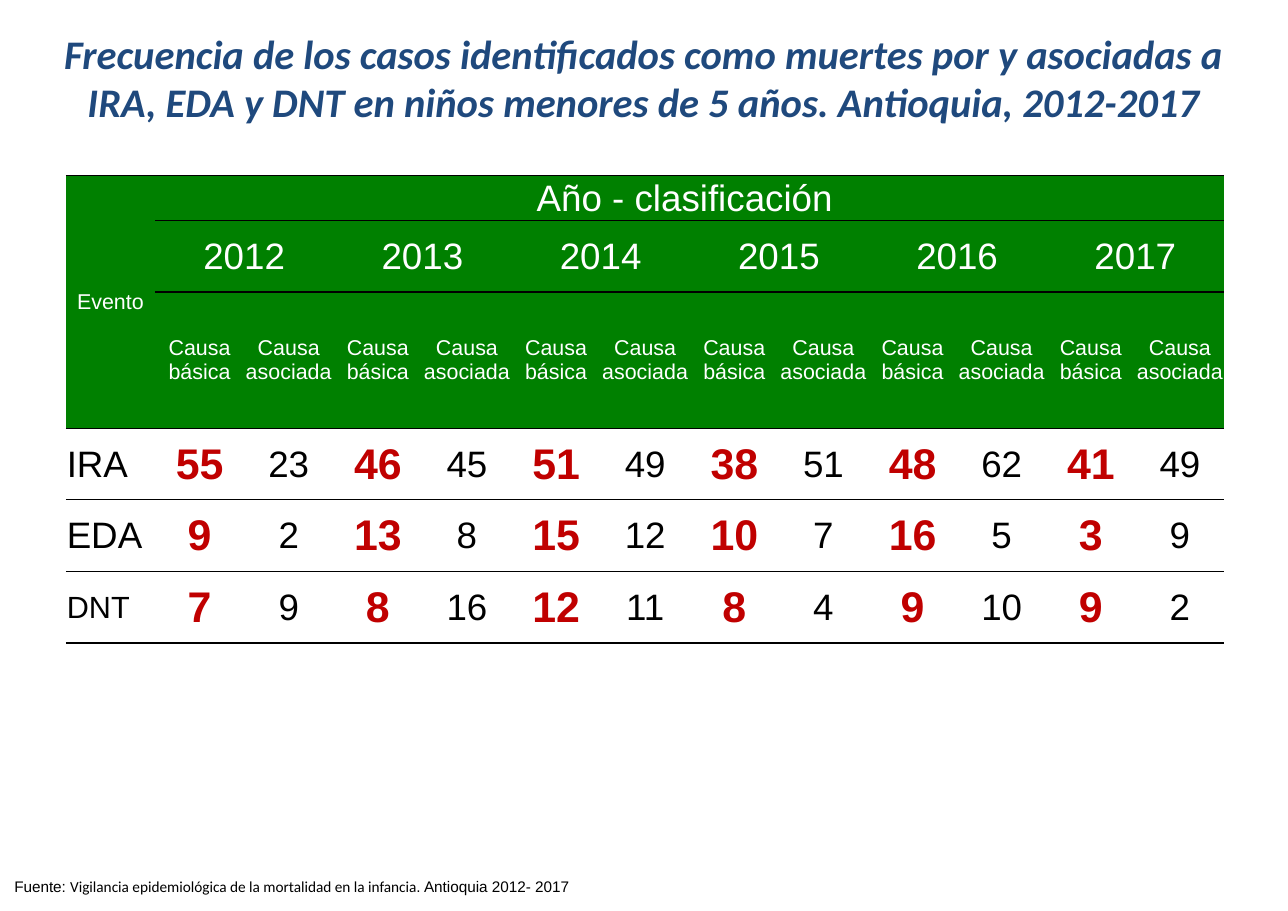
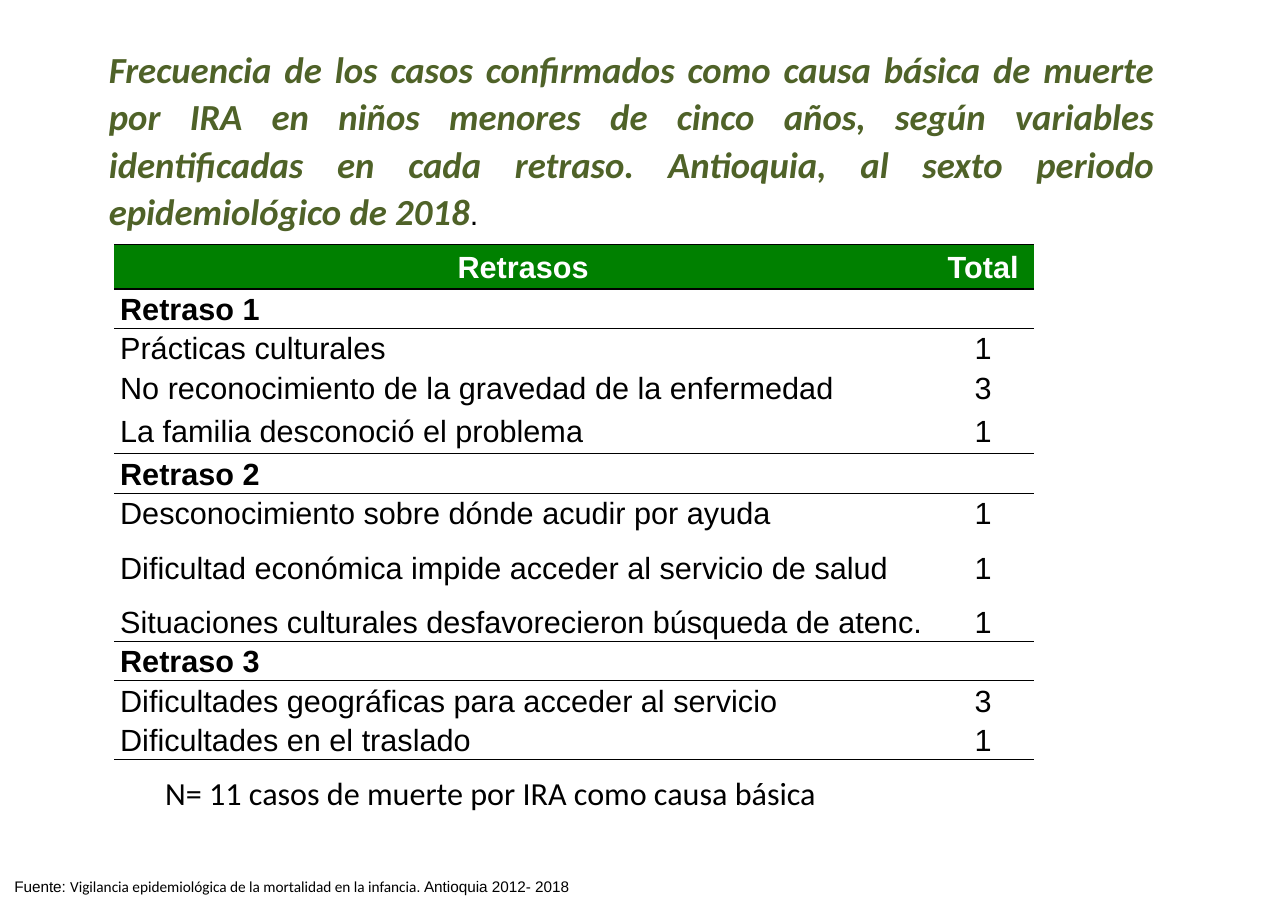
import pptx
import pptx.util
import pptx.dml.color
import pptx.enum.text
import pptx.oxml
import pptx.oxml.ns

Cm, Pt = pptx.util.Cm, pptx.util.Pt
ALIGN = pptx.enum.text.PP_ALIGN
COLORS = {"blue": "1F497D", "olive": "4F6228", "green": "008000",
          "red": "C00000", "black": "000000", "white": "FFFFFF"}
NO_STYLE = "{2D5ABB26-0587-4C30-8999-92F81FD0307C}"


def rgb(name):
    return pptx.dml.color.RGBColor.from_string(COLORS[name])


def run(text, size, color="black", bold=False, italic=False, font="Arial"):
    return dict(text=text, size=size, color=color, bold=bold,
                italic=italic, font=font)


class Deck:
    def __init__(self):
        self.prs = pptx.Presentation()
        self.prs.slide_width, self.prs.slide_height = Cm(29.7), Cm(21)
        self.s = None

    def slide(self):
        self.s = self.prs.slides.add_slide(self.prs.slide_layouts[6])

    def fill_text(self, tf, runs, align=ALIGN.LEFT, spacing=None):
        p = tf.paragraphs[0]
        p.alignment = align
        if spacing:
            p.line_spacing = spacing
        for spec_run in runs:
            r = p.add_run()
            r.text = spec_run["text"]
            r.font.size = Pt(spec_run["size"])
            r.font.name = spec_run["font"]
            r.font.bold = spec_run["bold"]
            r.font.italic = spec_run["italic"]
            r.font.color.rgb = rgb(spec_run["color"])

    def text(self, x, y, w, h, runs, align=ALIGN.LEFT, spacing=None, wrap=True):
        tf = self.s.shapes.add_textbox(Cm(x), Cm(y), Cm(w), Cm(h)).text_frame
        tf.word_wrap = wrap
        tf.auto_size = pptx.enum.text.MSO_AUTO_SIZE.SHAPE_TO_FIT_TEXT
        self.fill_text(tf, runs, align, spacing)
        return tf

    def title(self, x, y, w, h, text, size, color, align, spacing=None, end=()):
        title_run = run(text, size, color, True, True, "Calibri")
        return self.text(x, y, w, h, [title_run, *end], align, spacing)

    def source(self, year):
        self.text(0.08, 20.09, 23.01, 0.69, [
            run("Fuente: ", 10),
            run("Vigilancia epidemiológica de la mortalidad en la infancia",
                10, font="Calibri"),
            run(f". Antioquia 2012- {year}", 10)])

    def table(self, x, y, widths, heights, margins, header_rows):
        tbl = self.s.shapes.add_table(
            len(heights), len(widths), Cm(x), Cm(y),
            Cm(sum(widths)), Cm(sum(heights))).table
        tbl.first_row = tbl.horz_banding = False
        tbl._tbl.tblPr.find(pptx.oxml.ns.qn("a:tableStyleId")).text = NO_STYLE
        for column, width in zip(tbl.columns, widths):
            column.width = Cm(width)
        side, top = margins
        for i, height in enumerate(heights):
            tbl.rows[i].height = Cm(height)
            for cell in tbl.rows[i].cells:
                cell.margin_left = cell.margin_right = Cm(side)
                cell.margin_top, cell.margin_bottom = Cm(top), 0
                cell.vertical_anchor = pptx.enum.text.MSO_ANCHOR.MIDDLE
                if i < header_rows:
                    cell.fill.solid()
                    cell.fill.fore_color.rgb = rgb("green")
                else:
                    cell.fill.background()
        return tbl

    def cell(self, tbl, row, col, text, size, color="black", bold=False,
             align=ALIGN.CENTER, spacing=None, to=None):
        c = tbl.cell(row, col)
        if to:
            c.merge(tbl.cell(*to))
        self.fill_text(c.text_frame, [run(text, size, color, bold)], align, spacing)

    def edge(self, cell, side):
        tcPr = cell._tc.get_or_add_tcPr()
        has_top = tcPr.find(pptx.oxml.ns.qn("a:lnT")) is not None
        tcPr.insert(int(has_top), pptx.oxml.parse_xml(
            f'<a:ln{side} {pptx.oxml.ns.nsdecls("a")} w="12700"><a:solidFill>'
            f'<a:srgbClr val="{COLORS["black"]}"/></a:solidFill></a:ln{side}>'))

    def rule(self, tbl, row, first_col=0):
        """Line above the given row; a row past the end closes the table."""
        for col in range(first_col, len(tbl.columns)):
            if row < len(tbl.rows):
                self.edge(tbl.cell(row, col), "T")
            if row > 0:
                self.edge(tbl.cell(row - 1, col), "B")


def frequency_slide(d):
    d.slide()
    tf = d.title(0.84, 0.51, 28.02, 2.54,
                 "Frecuencia de los casos identificados como muertes por y "
                 "asociadas a IRA, EDA y DNT en niños menores de 5 años. "
                 "Antioquia, 2012-2017", 26.5, "blue", ALIGN.CENTER)
    tf.margin_left = tf.margin_right = Cm(0.28)
    tf.margin_top = tf.margin_bottom = Cm(0.15)
    d.source(2017)

    # Header: years, each split in two causes
    tbl = d.table(1.52, 4.04, [26.72 / 13] * 13,
                  [1.04, 1.65, 3.14, 1.65, 1.65, 1.65], (0.02, 0.02), 3)
    d.cell(tbl, 0, 0, "Evento", 14, "white", to=(2, 0))
    d.cell(tbl, 0, 1, "Año - clasificación ", 24, "white", to=(0, 12))
    for i, year in enumerate(range(2012, 2018)):
        col = 1 + 2 * i
        d.cell(tbl, 1, col, str(year), 24, "white", to=(1, col + 1))
        d.cell(tbl, 2, col, "Causa básica", 14, "white")
        d.cell(tbl, 2, col + 1, "Causa asociada", 14, "white")

    # Body: basic cause in red, associated cause in black
    events = [("IRA", 24, [55, 23, 46, 45, 51, 49, 38, 51, 48, 62, 41, 49]),
              ("EDA", 24, [9, 2, 13, 8, 15, 12, 10, 7, 16, 5, 3, 9]),
              ("DNT", 20, [7, 9, 8, 16, 12, 11, 8, 4, 9, 10, 9, 2])]
    for row, (event, size, counts) in enumerate(events, 3):
        d.cell(tbl, row, 0, event, size, align=ALIGN.LEFT)
        for col, count in enumerate(counts, 1):
            style = (28, "red", True) if col % 2 else (24,)
            d.cell(tbl, row, col, str(count), *style)
    for row in range(7):
        d.rule(tbl, row, 1 if row in (1, 2) else 0)


def delays_slide(d):
    d.slide()
    d.title(2.26, 0.89, 24.61, 4.65,
            "Frecuencia de los casos confirmados como causa básica de muerte "
            "por IRA en niños menores de cinco años, según variables "
            "identificadas en cada retraso. Antioquia, al sexto periodo "
            "epidemiológico de 2018", 24, "olive", ALIGN.JUSTIFY, 1.07,
            [run(".", 20)])

    # Rows without a total are group headings
    rows = [("Retraso 1", None, 0.9),
            ("Prácticas culturales", 1, 0.9),
            ("No reconocimiento de la gravedad de la enfermedad", 3, 0.9),
            ("La familia desconoció el problema", 1, 1.08),
            ("Retraso 2", None, 0.9),
            ("Desconocimiento sobre dónde acudir por ayuda", 1, 0.9),
            ("Dificultad económica impide acceder al servicio de salud", 1, 1.6),
            ("Situaciones culturales desfavorecieron búsqueda de atenc.", 1, 0.9),
            ("Retraso 3", None, 0.9),
            ("Dificultades geográficas para acceder al servicio", 3, 0.9),
            ("Dificultades en el traslado", 1, 0.9)]
    tbl = d.table(2.64, 5.64, [18.85, 2.36],
                  [1.02] + [height for _, _, height in rows], (0.13, 0), 1)
    for col, heading in enumerate(["Retrasos", "Total"]):
        d.cell(tbl, 0, col, heading, 20, "white", True, spacing=1.07)
    d.rule(tbl, 0)
    for row, (label, total, _) in enumerate(rows, 1):
        is_group = total is None
        d.cell(tbl, row, 0, label, 20, bold=is_group, align=ALIGN.LEFT,
               spacing=1.07, to=(row, 1) if is_group else None)
        if is_group:
            d.rule(tbl, row)
        else:
            d.cell(tbl, row, 1, str(total), 20, spacing=1.07)
    d.rule(tbl, len(tbl.rows))

    d.source(2018)
    d.text(3.56, 17.7, 16.08, 1.14,
           [run("N= 11 casos de muerte por IRA como causa básica", 21,
                font="Calibri")], wrap=False)


def main():
    d = Deck()
    frequency_slide(d)
    delays_slide(d)
    d.prs.save("out.pptx")


if __name__ == "__main__":
    main()
